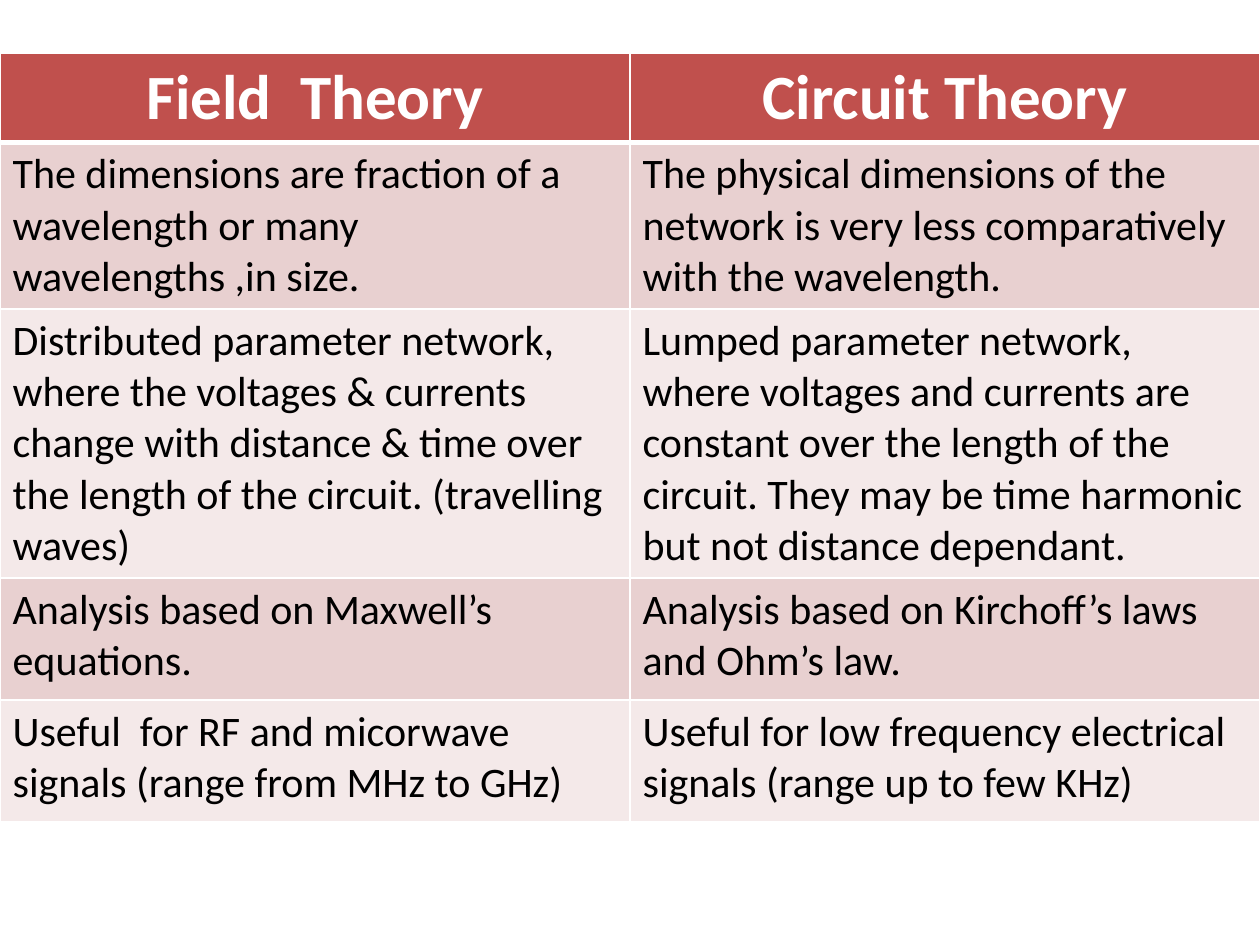
from lxml.etree import SubElement
from pptx import Presentation
from pptx.dml.color import RGBColor
from pptx.enum.text import PP_ALIGN as Align
from pptx.oxml.ns import qn
from pptx.util import Emu, Pt

WHITE = RGBColor(0xFF, 0xFF, 0xFF)
BLACK = RGBColor(0x00, 0x00, 0x00)
HEADER_RED = RGBColor(0xC0, 0x50, 0x4D)
BAND_DARK = RGBColor(0xE8, 0xD0, 0xD0)
BAND_LIGHT = RGBColor(0xF4, 0xE9, 0xE9)

SLIDE_WIDTH, SLIDE_HEIGHT = 1260, 945
EMU_PER_PX = 914400 / 126

HEADINGS = ("Field  Theory", "Circuit Theory")
COMPARISONS = (
    ("The dimensions are fraction of a wavelength or many wavelengths ,in size.",
     "The physical dimensions of the network is very less comparatively "
     "with the wavelength."),
    ("Distributed parameter network, where the voltages & currents change with "
     "distance & time over the length of the circuit. (travelling waves)",
     "Lumped parameter network, where voltages and currents are constant over the "
     "length of the circuit. They may be time harmonic but not distance dependant."),
    ("Analysis based on Maxwell’s equations.",
     "Analysis based on Kirchoff’s laws and Ohm’s law."),
    ("Useful  for RF and micorwave signals (range from MHz to GHz)",
     "Useful for low frequency electrical signals (range up to few KHz)"),
)
ROW_HEIGHTS = (63, 158, 190, 122, 122)


def px(length):
    return Emu(round(length * EMU_PER_PX))


class SlideBuilder:
    font_name = "Calibri"
    border_color = WHITE

    def __init__(self, slide):
        self.slide = slide

    def borders(self, cell, top, bottom):
        """Outline a cell; widths are in points and the sides are 1 pt."""
        properties = cell._tc.get_or_add_tcPr()
        widths = (("lnL", 1), ("lnR", 1), ("lnT", top), ("lnB", bottom))
        # Border lines come before the fill in the cell properties
        for position, (tag, width) in enumerate(widths):
            line = SubElement(properties, qn(f"a:{tag}"), w=str(Pt(width)))
            fill = SubElement(line, qn("a:solidFill"))
            SubElement(fill, qn("a:srgbClr"), val=str(self.border_color))
            properties.insert(position, line)

    def cell(self, cell, text, fill, color, size, bold=False, align=Align.LEFT):
        cell.text = text
        cell.fill.solid()
        cell.fill.fore_color.rgb = fill
        paragraph = cell.text_frame.paragraphs[0]
        paragraph.alignment = align
        font = paragraph.font
        font.name, font.size, font.bold = self.font_name, Pt(size), bold
        font.color.rgb = color

    def table(self, left, top, width, height, row_heights, headings, body):
        frame = self.slide.shapes.add_table(
            len(row_heights), len(headings), px(left), px(top), px(width), px(height))
        table = frame.table
        for row, row_height in zip(table.rows, row_heights):
            row.height = px(row_height)
        frame.height = px(height)

        for row_index, texts in enumerate((headings, *body)):
            for column_index, text in enumerate(texts):
                cell = table.cell(row_index, column_index)
                if row_index == 0:
                    self.cell(cell, text, HEADER_RED, WHITE, 36, True, Align.CENTER)
                else:
                    band = BAND_DARK if row_index % 2 else BAND_LIGHT
                    self.cell(cell, text, band, BLACK, 24)
                self.borders(cell, top=3 if row_index == 1 else 1,
                             bottom=3 if row_index == 0 else 1)


def main():
    presentation = Presentation()
    presentation.slide_width = px(SLIDE_WIDTH)
    presentation.slide_height = px(SLIDE_HEIGHT)
    blank_layout = presentation.slide_layouts[6]
    builder = SlideBuilder(presentation.slides.add_slide(blank_layout))

    # Comparison of the two theories
    builder.table(0, 53, SLIDE_WIDTH, 762, ROW_HEIGHTS, HEADINGS, COMPARISONS)

    presentation.save("out.pptx")


if __name__ == "__main__":
    main()
